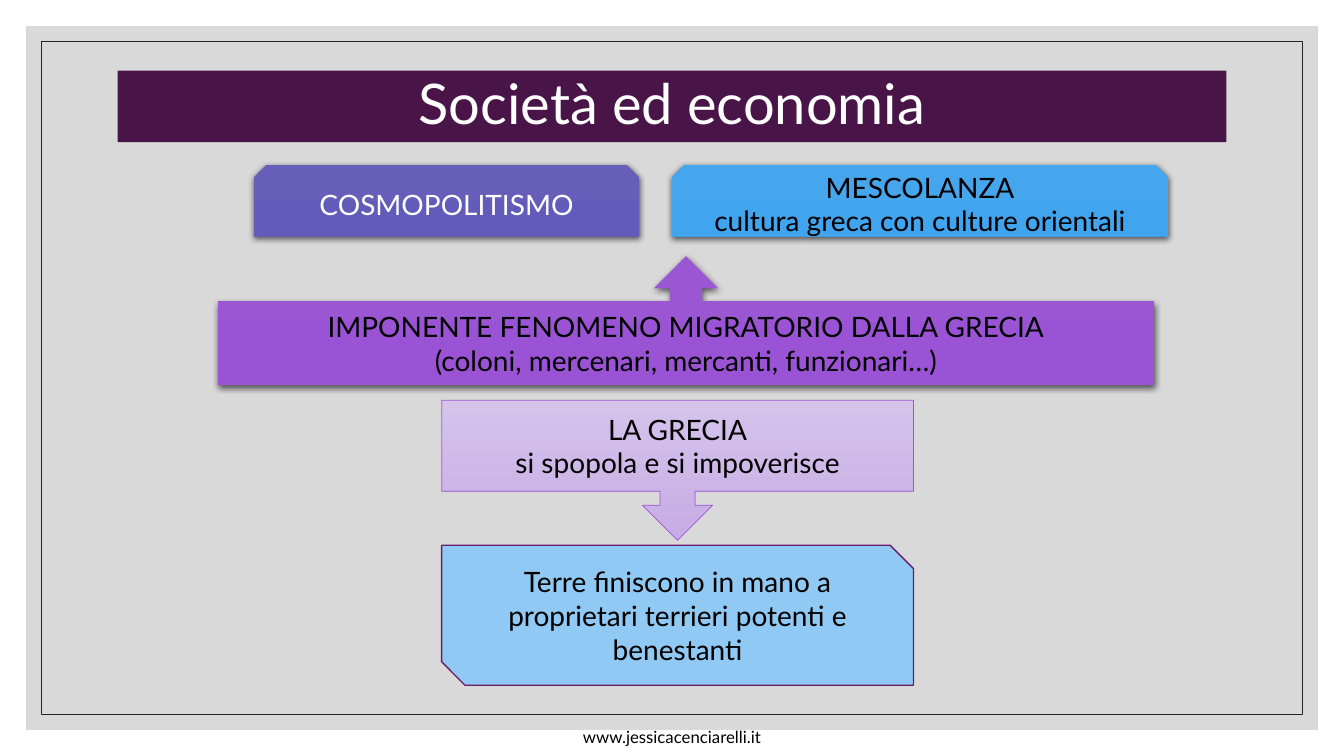
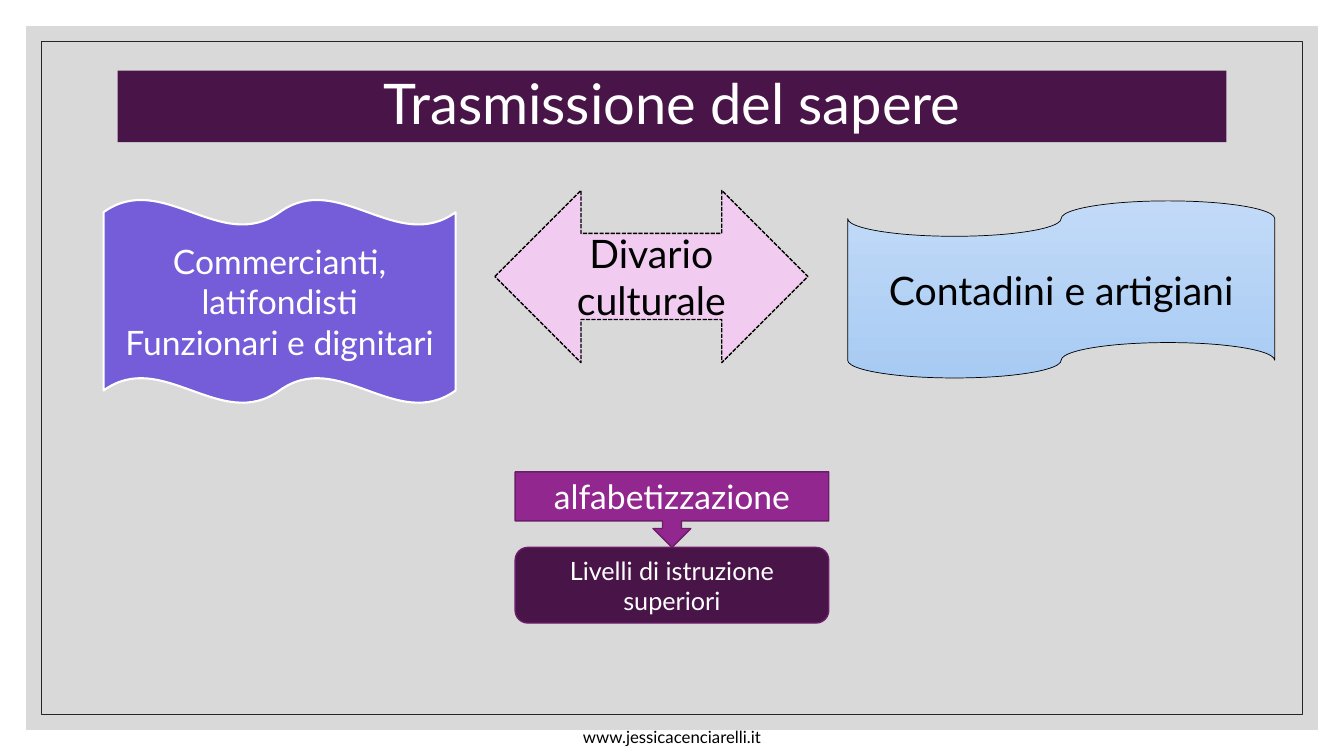
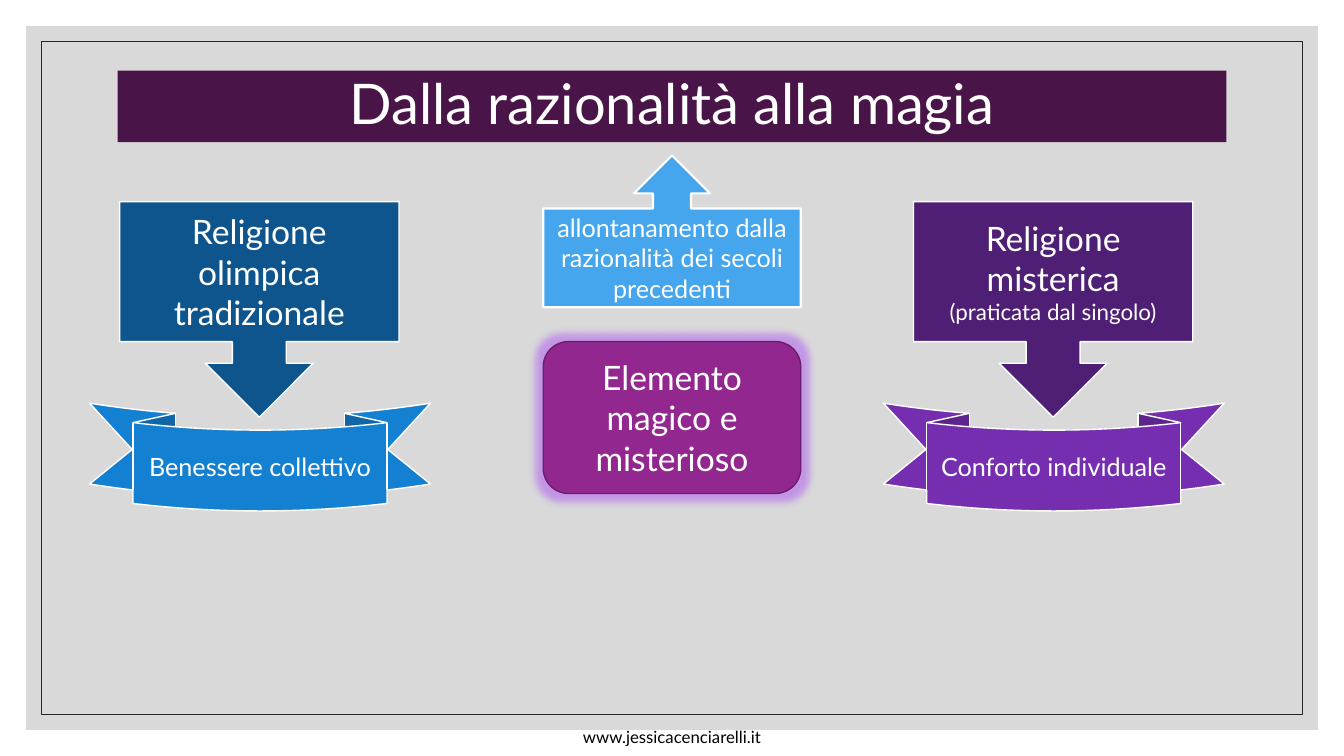
from lxml import etree
from pptx import Presentation
from pptx.dml.color import RGBColor
from pptx.enum.dml import MSO_LINE
from pptx.enum.shapes import MSO_SHAPE
from pptx.enum.text import MSO_ANCHOR, PP_ALIGN
from pptx.oxml.ns import qn
from pptx.util import Pt

RECTANGLE = MSO_SHAPE.RECTANGLE
ROUNDED = MSO_SHAPE.ROUNDED_RECTANGLE
SNIPPED_TOP = MSO_SHAPE.SNIP_2_SAME_RECTANGLE
SNIPPED_DIAGONAL = MSO_SHAPE.SNIP_2_DIAG_RECTANGLE
UP_CALLOUT = MSO_SHAPE.UP_ARROW_CALLOUT
DOWN_CALLOUT = MSO_SHAPE.DOWN_ARROW_CALLOUT
DOUBLE_ARROW = MSO_SHAPE.LEFT_RIGHT_ARROW
DOUBLE_WAVE = MSO_SHAPE.DOUBLE_WAVE
PUNCHED_TAPE = MSO_SHAPE.FLOWCHART_PUNCHED_TAPE
RIBBON = MSO_SHAPE.CURVED_DOWN_RIBBON
CENTER = PP_ALIGN.CENTER
MIDDLE = MSO_ANCHOR.MIDDLE
DASHED = MSO_LINE.SQUARE_DOT

FONT = "Lato"
SLIDE_WIDTH, SLIDE_HEIGHT = 960, 540
COLORS = {
    "white": "FFFFFF", "black": "000000", "backdrop": "D9D9D9", "frame": "262626",
    "plum": "491447", "plum line": "6C1D6A", "magenta": "92278F", "pink": "F1CCF0",
    "indigo": "665EB8", "indigo end": "635BB9", "periwinkle": "755DD9",
    "violet": "9B57D3", "violet end": "9A53D4", "lilac": "D5C3EC", "lilac end": "C6ACE4",
    "sky": "45A5ED", "sky end": "40A4EF", "pale blue": "8FC9F4",
    "ice": "C2DAF8", "ice end": "A8CBF3", "navy": "0D558C", "blue": "1480D1",
    "deep purple": "4F1F76", "purple": "762EB1", "glow": "A030F8",
}


def add_box(slide, kind, box, fill=None, line=None, weight=1, lines=(), size=20, color="white"):
    """Add a shape; a pair of fill names makes a vertical gradient."""
    shape = slide.shapes.add_shape(kind, *[Pt(length) for length in box])
    shape.shadow.inherit = False
    if fill is None:
        shape.fill.background()
    elif isinstance(fill, tuple):
        shape.fill.gradient()
        shape.fill.gradient_angle = 270
        for stop, name in zip(shape.fill.gradient_stops, fill):
            stop.color.rgb = RGBColor.from_string(COLORS[name])
    else:
        shape.fill.solid()
        shape.fill.fore_color.rgb = RGBColor.from_string(COLORS[fill])
    if line is None:
        shape.line.fill.background()
    else:
        shape.line.color.rgb = RGBColor.from_string(COLORS[line])
        shape.line.width = Pt(weight)
    frame = shape.text_frame
    frame.word_wrap = True
    frame.vertical_anchor = MIDDLE
    for index, text in enumerate(lines):
        paragraph = frame.add_paragraph() if index else frame.paragraphs[0]
        paragraph.alignment = CENTER
        run = paragraph.add_run()
        run.text = text
        run.font.name = FONT
        run.font.size = Pt(size)
        run.font.color.rgb = RGBColor.from_string(COLORS[color])
    return shape


def add_effect(shape, tag, color, opacity, **attributes):
    """Add a shadow or a glow to a shape."""
    effects = shape._element.spPr.find(qn("a:effectLst"))
    effect = etree.SubElement(effects, qn(tag))
    for name, value in attributes.items():
        effect.set(name, str(int(value)))
    tint = etree.SubElement(effect, qn("a:srgbClr"), val=COLORS[color])
    etree.SubElement(tint, qn("a:alpha"), val=str(opacity * 1000))


presentation = Presentation()
presentation.slide_width = Pt(SLIDE_WIDTH)
presentation.slide_height = Pt(SLIDE_HEIGHT)

# Shared backdrop, frame, footer and title band
slides = []
for title in ("Società ed economia", "Trasmissione del sapere", "Dalla razionalità alla magia"):
    slide = presentation.slides.add_slide(presentation.slide_layouts[6])
    for margin, height, fill, line in ((18.7, 502.6, "backdrop", None), (29.5, 481, None, "frame")):
        add_box(slide, RECTANGLE, (margin, margin, SLIDE_WIDTH - 2 * margin, height), fill, line, 0.5)
    add_box(slide, RECTANGLE, (0, 515.5, SLIDE_WIDTH, 21.6),
            lines=["www.jessicacenciarelli.it"], size=12, color="black")
    band = add_box(slide, RECTANGLE, (84, 50.5, 792, 51), "plum", lines=[title], size=40)
    band.text_frame.paragraphs[0].line_spacing = 0.9
    slides.append(slide)
society, knowledge, magic = slides

# Society: raised boxes about migration
for kind, box, fill, color, lines in (
    (SNIPPED_TOP, (181.5, 118, 275, 51), ("indigo", "indigo end"), "white", ["COSMOPOLITISMO"]),
    (UP_CALLOUT, (155.5, 183, 669, 92), ("violet", "violet end"), "black",
     ["IMPONENTE FENOMENO MIGRATORIO DALLA GRECIA",
      "(coloni, mercenari, mercanti, funzionari…)"]),
    (SNIPPED_TOP, (480, 118, 354.5, 51), ("sky", "sky end"), "black",
     ["MESCOLANZA", "cultura greca con culture orientali"]),
):
    shape = add_box(society, kind, box, fill, lines=lines, color=color)
    add_effect(shape, "a:outerShdw", "black", 63, blurRad=Pt(4.5), dist=Pt(1.5),
               dir=90 * 60000, rotWithShape=0)

# Society: what happens to Greece
add_box(society, DOWN_CALLOUT, (315.5, 286, 337, 100), ("lilac", "lilac end"), "violet", 0.5,
        ["LA GRECIA", "si spopola e si impoverisce"], color="black")
add_box(society, SNIPPED_DIAGONAL, (315.5, 389.5, 337, 100), "pale blue", "plum line",
        lines=["Terre finiscono in mano a proprietari terrieri potenti e benestanti"], color="black")

# Knowledge: the gap between two groups
add_box(knowledge, DOUBLE_WAVE, (74, 142.5, 251.5, 145.5), "periwinkle", "white", 1.5,
        ["Commercianti, latifondisti", "Funzionari e dignitari"], 24)
add_box(knowledge, PUNCHED_TAPE, (605.5, 143.5, 305, 126.5), ("ice", "ice end"), "black", 0.5,
        ["Contadini e artigiani"], 28, "black")
gap_arrow = add_box(knowledge, DOUBLE_ARROW, (353.5, 136, 223.5, 123), "pink", "black", 1,
                    ["Divario culturale"], 28, "black")
gap_arrow.line.dash_style = DASHED

# Knowledge: from literacy to higher education
add_box(knowledge, DOWN_CALLOUT, (368, 337, 224, 54), "magenta", "plum line",
        lines=["alfabetizzazione"], size=24)
add_box(knowledge, ROUNDED, (368, 391, 224, 54), "plum", "plum line",
        lines=["Livelli di istruzione superiori"], size=18)

# Magic: central element
element = add_box(magic, ROUNDED, (388, 244, 184, 108.5), "magenta", "plum line",
                  lines=["Elemento magico e misterioso"], size=24)
add_effect(element, "a:glow", "glow", 40, rad=Pt(11))
add_box(magic, UP_CALLOUT, (388, 111, 184, 108.5), "sky", "white", 1.5,
        ["allontanamento dalla razionalità dei secoli precedenti"], 18)

# Magic: each religion with its ribbon
for left, callout_fill, ribbon_fill, religion, benefit in (
    (631, "deep purple", "purple", ["Religione misterica", "(praticata dal singolo)"],
     "Conforto individuale"),
    (64, "navy", "blue", ["Religione olimpica tradizionale"], "Benessere collettivo"),
):
    callout = add_box(magic, DOWN_CALLOUT, (left + 21.5, 144, 199.5, 154), callout_fill, "white",
                      lines=religion, size=24)
    for paragraph in callout.text_frame.paragraphs[1:]:
        paragraph.runs[0].font.size = Pt(16)
    ribbon = add_box(magic, RIBBON, (left, 288, 243.5, 77), ribbon_fill, "white",
                     lines=[benefit], size=18)
    for index, value in enumerate((0.25, 0.745, 0.125)):
        ribbon.adjustments[index] = value

presentation.save("out.pptx")
